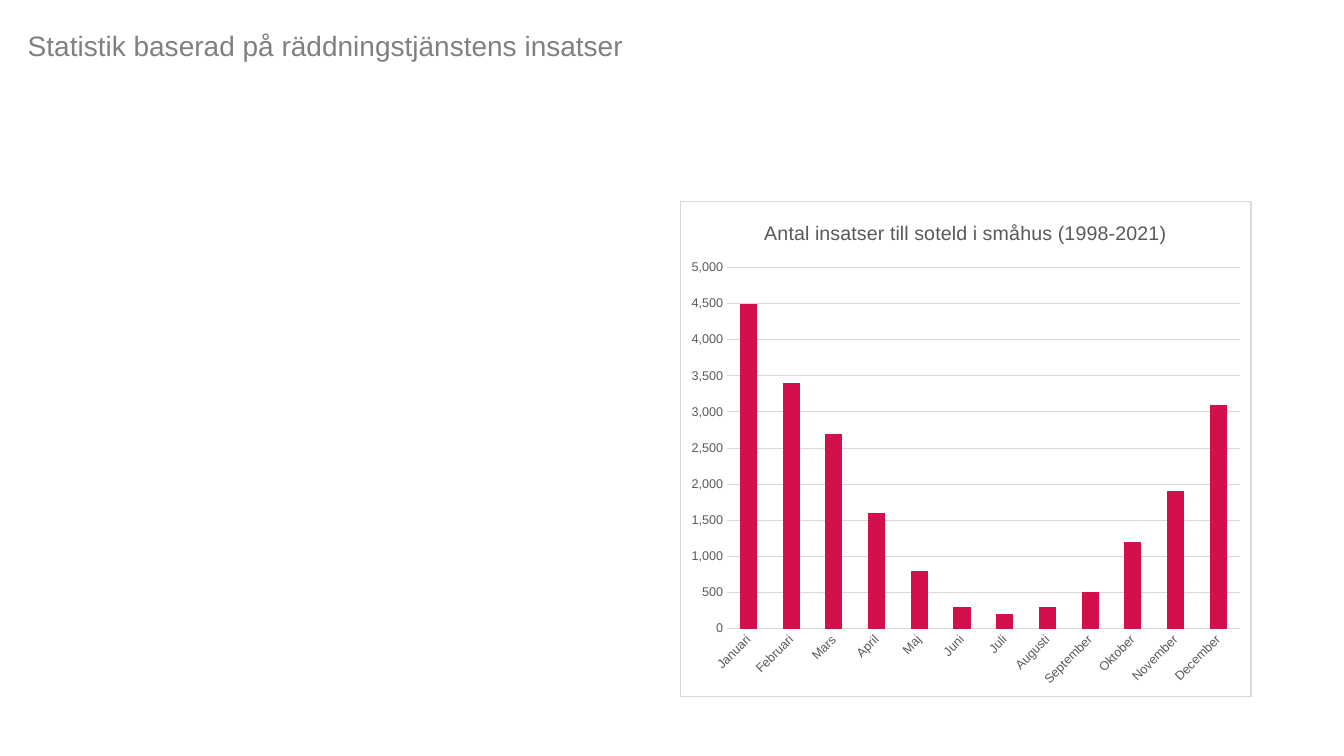
from typing import NamedTuple

from lxml.etree import SubElement
from pptx import Presentation
from pptx.chart.chart import Chart
from pptx.chart.data import CategoryChartData
from pptx.dml.color import RGBColor
from pptx.enum.chart import XL_CHART_TYPE, XL_TICK_MARK
from pptx.enum.text import MSO_ANCHOR
from pptx.oxml import parse_xml
from pptx.oxml.ns import nsdecls, qn
from pptx.slide import Slide
from pptx.text.text import Font
from pptx.util import Cm, Pt

FONT_NAME = "Arial"
AUTOMATIC_ROTATION = "-60000000"
COLORS = {
    "heading": "808080",
    "label": "595959",
    "grid": "D9D9D9",
    "bar": "D3104C",
    "background": "FFFFFF",
}


class Month(NamedTuple):
    name: str
    callouts: int


MONTHS = [
    Month("Januari", 4500),
    Month("Februari", 3400),
    Month("Mars", 2700),
    Month("April", 1600),
    Month("Maj", 800),
    Month("Juni", 300),
    Month("Juli", 200),
    Month("Augusti", 300),
    Month("September", 500),
    Month("Oktober", 1200),
    Month("November", 1900),
    Month("December", 3100),
]


def format_font(font: Font, size: float, color: str) -> None:
    font.name = FONT_NAME
    font.size = Pt(size)
    font.bold = False
    font.color.rgb = RGBColor.from_string(COLORS[color])


def write_text(text_frame, text: str, *, size: float, color: str, spacing: float = 1.0) -> None:
    paragraph = text_frame.paragraphs[0]
    paragraph.line_spacing = spacing
    run = paragraph.add_run()
    run.text = text
    format_font(run.font, size, color)


def add_heading(slide: Slide, text: str) -> None:
    shape = slide.shapes.add_textbox(Cm(0.45), Cm(0.46), Cm(29.21), Cm(1.47))
    shape.text_frame.word_wrap = True
    shape.text_frame.vertical_anchor = MSO_ANCHOR.MIDDLE
    write_text(shape.text_frame, text, size=20, color="heading", spacing=0.9)


def frame_chart(chart: Chart) -> None:
    chart_space = chart._chartSpace
    properties = parse_xml(f"<c:spPr {nsdecls('c', 'a')}/>")
    fill = SubElement(properties, qn("a:solidFill"))
    SubElement(fill, qn("a:srgbClr"), val=COLORS["background"])
    line = SubElement(properties, qn("a:ln"), w=str(Pt(0.75)))
    line_fill = SubElement(line, qn("a:solidFill"))
    SubElement(line_fill, qn("a:srgbClr"), val=COLORS["grid"])
    chart_space.find(qn("c:chart")).addnext(properties)


def style_axes(chart: Chart) -> None:
    category_axis, value_axis = chart.category_axis, chart.value_axis
    for axis in (category_axis, value_axis):
        axis.major_tick_mark = XL_TICK_MARK.NONE
        axis.minor_tick_mark = XL_TICK_MARK.NONE
        format_font(axis.tick_labels.font, 9, "label")
    value_axis.minimum_scale, value_axis.maximum_scale = 0, 5000
    value_axis.major_unit = 500
    value_axis.tick_labels.number_format = "#,##0"
    value_axis.tick_labels.number_format_is_linked = False
    value_axis.format.line.fill.background()
    for line in (category_axis.format.line, value_axis.major_gridlines.format.line):
        line.color.rgb = RGBColor.from_string(COLORS["grid"])
        line.width = Pt(0.75)
    label_body = category_axis._element.find(qn("c:txPr")).find(qn("a:bodyPr"))
    label_body.set("rot", AUTOMATIC_ROTATION)
    label_body.set("vert", "horz")


def add_month_chart(slide: Slide, title: str, months: list[Month]) -> None:
    data = CategoryChartData()
    data.categories = [month.name for month in months]
    data.add_series("Series 1", [month.callouts for month in months])
    chart = slide.shapes.add_chart(
        XL_CHART_TYPE.COLUMN_CLUSTERED, Cm(17.13), Cm(5.06), Cm(14.41), Cm(12.5), data
    ).chart
    format_font(chart.font, 10, "label")
    chart.has_legend = False
    chart.has_title = True
    chart.chart_title.include_in_layout = False
    write_text(chart.chart_title.text_frame, title, size=14, color="label")
    plot = chart.plots[0]
    plot.gap_width = 150
    plot.vary_by_categories = False
    bar_fill = plot.series[0].format.fill
    bar_fill.solid()
    bar_fill.fore_color.rgb = RGBColor.from_string(COLORS["bar"])
    style_axes(chart)
    frame_chart(chart)


def main() -> None:
    presentation = Presentation()
    presentation.slide_width, presentation.slide_height = Cm(33.87), Cm(19.05)
    slide = presentation.slides.add_slide(presentation.slide_layouts[6])
    add_heading(slide, "Statistik baserad på räddningstjänstens insatser")
    add_month_chart(slide, "Antal insatser till soteld i småhus (1998-2021)", MONTHS)
    presentation.save("out.pptx")


if __name__ == "__main__":
    main()
